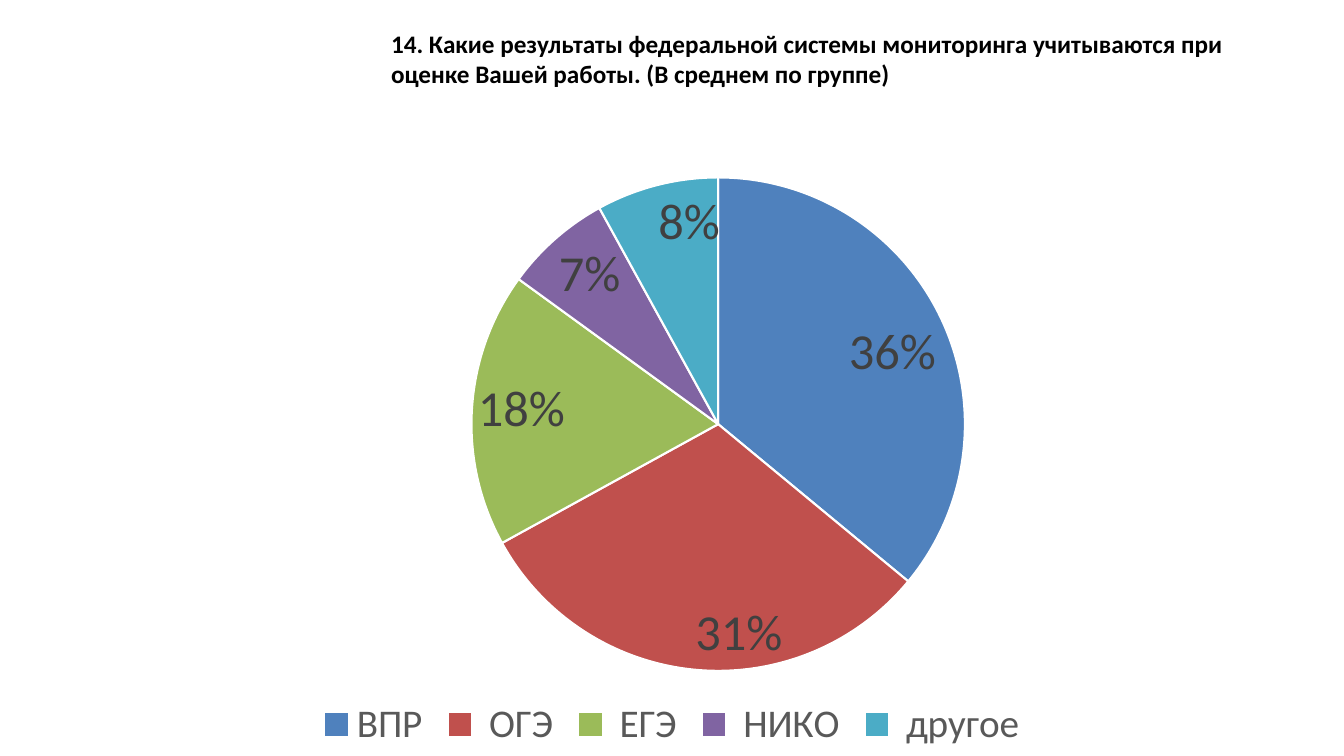
from typing import NamedTuple

import pptx
import pptx.chart.data
import pptx.dml.color
import pptx.enum.chart
import pptx.enum.text
import pptx.oxml
import pptx.oxml.ns
import pptx.util

RGBColor = pptx.dml.color.RGBColor
BLACK = RGBColor(0x00, 0x00, 0x00)
WHITE = RGBColor(0xFF, 0xFF, 0xFF)
LABEL_GRAY = RGBColor(0x40, 0x40, 0x40)
LEGEND_GRAY = RGBColor(0x59, 0x59, 0x59)
BLUE = RGBColor(0x4F, 0x81, 0xBD)
RED = RGBColor(0xC0, 0x50, 0x4D)
GREEN = RGBColor(0x9B, 0xBB, 0x59)
PURPLE = RGBColor(0x80, 0x64, 0xA2)
TEAL = RGBColor(0x4B, 0xAC, 0xC6)

FONT = "Calibri"
EMU_PER_PX = 9525
TITLE = (
    "14. Какие результаты федеральной системы мониторинга учитываются "
    "при оценке Вашей работы. (В среднем по группе)"
)


class Area(NamedTuple):
    left: int
    top: int
    width: int
    height: int

    def emu(self) -> list[int]:
        return [px(length) for length in self]


class Slice(NamedTuple):
    name: str
    percent: int
    color: RGBColor


PAGE_WIDTH, PAGE_HEIGHT = 1280, 720
TITLE_AREA = Area(363, 22, 825, 97)
CHART_AREA = Area(0, 95, 1280, 625)
PIE_AREA = Area(449, 169, 470, 470)
SLICES = [
    Slice("ВПР", 36, BLUE),
    Slice(" ОГЭ", 31, RED),
    Slice(" ЕГЭ", 18, GREEN),
    Slice(" НИКО", 7, PURPLE),
    Slice(" другое", 8, TEAL),
]


def px(length: int) -> int:
    return pptx.util.Emu(length * EMU_PER_PX)


def style_font(font, size: int, color: RGBColor, bold: bool = False) -> None:
    font.name = FONT
    font.size = pptx.util.Pt(size)
    font.bold = bold
    font.color.rgb = color


def add_title(page) -> None:
    box = page.shapes.add_textbox(*TITLE_AREA.emu())
    frame = box.text_frame
    frame.word_wrap = True
    frame.auto_size = pptx.enum.text.MSO_AUTO_SIZE.SHAPE_TO_FIT_TEXT
    para = frame.paragraphs[0]
    para.text = TITLE
    style_font(para.font, 18, BLACK, bold=True)


def place_pie(chart) -> None:
    """Fix the pie inside the chart, as fractions of the chart area."""
    fractions = {
        "x": (PIE_AREA.left - CHART_AREA.left) / CHART_AREA.width,
        "y": (PIE_AREA.top - CHART_AREA.top) / CHART_AREA.height,
        "w": PIE_AREA.width / CHART_AREA.width,
        "h": PIE_AREA.height / CHART_AREA.height,
    }
    settings = '<c:layoutTarget val="inner"/><c:xMode val="edge"/><c:yMode val="edge"/>'
    settings += "".join(f'<c:{key} val="{value:.4f}"/>' for key, value in fractions.items())
    layout = pptx.oxml.parse_xml(
        f'<c:layout {pptx.oxml.ns.nsdecls("c")}>'
        f"<c:manualLayout>{settings}</c:manualLayout></c:layout>"
    )
    plot_area = chart._chartSpace.chart.plotArea
    for automatic in plot_area.findall(pptx.oxml.ns.qn("c:layout")):
        plot_area.remove(automatic)
    plot_area.insert(0, layout)


def add_pie(page) -> None:
    data = pptx.chart.data.CategoryChartData(number_format="0")
    data.categories = [piece.name for piece in SLICES]
    data.add_series("Series 1", [piece.percent for piece in SLICES])
    chart = page.shapes.add_chart(
        pptx.enum.chart.XL_CHART_TYPE.PIE, *CHART_AREA.emu(), data
    ).chart
    chart.has_title = False
    style_font(chart.font, 10, BLACK)
    place_pie(chart)

    # Slices
    plot = chart.plots[0]
    plot.vary_by_categories = True
    for index, piece in enumerate(SLICES):
        style = plot.series[0].points[index].format
        style.fill.solid()
        style.fill.fore_color.rgb = piece.color
        style.line.color.rgb = WHITE
        style.line.width = pptx.util.Pt(1.5)

    # Percent labels
    plot.has_data_labels = True
    labels = plot.data_labels
    labels.show_percentage = True
    labels.show_value = False
    labels.number_format = "0%"
    labels.number_format_is_linked = False
    labels.position = pptx.enum.chart.XL_LABEL_POSITION.INSIDE_END
    style_font(labels.font, 36, LABEL_GRAY)

    # Legend
    chart.has_legend = True
    chart.legend.position = pptx.enum.chart.XL_LEGEND_POSITION.BOTTOM
    chart.legend.include_in_layout = False
    style_font(chart.legend.font, 28, LEGEND_GRAY)


def main() -> None:
    deck = pptx.Presentation()
    deck.slide_width = px(PAGE_WIDTH)
    deck.slide_height = px(PAGE_HEIGHT)
    page = deck.slides.add_slide(deck.slide_layouts[6])
    add_title(page)
    add_pie(page)
    deck.save("out.pptx")


if __name__ == "__main__":
    main()
